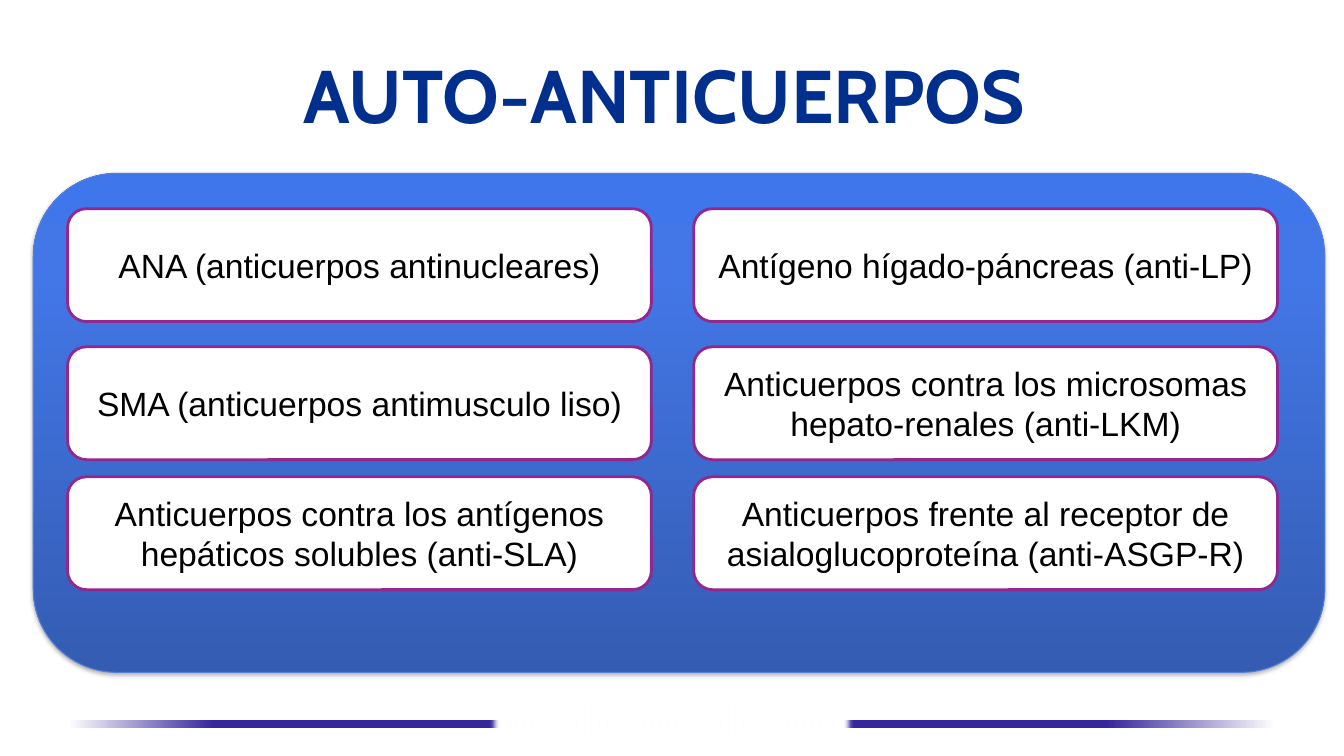
"""Build the slide on auto-antibodies: a title, a blue panel and six cards."""
from dataclasses import dataclass
from typing import Optional

from pptx import Presentation
from pptx import oxml
from pptx import util as u
from pptx.dml import color
from pptx.enum import shapes, text
from pptx.oxml import ns

Stops = tuple[tuple[int, str], ...]


@dataclass(frozen=True)
class Theme:
    """Colours, fonts and type sizes of the slide."""
    white: str = "FFFFFF"
    title: str = "002F8E"
    title_edge: str = "FDFCFD"
    body: str = "000000"
    card_edge: str = "92278F"
    panel_edge: str = "547ED9"
    panel: Stops = ((0, "345CB2"), (80, "4377E7"), (100, "4076EB"))
    band: Stops = ((0, "FFFFFF"), (12, "36259D"), (50, "36259D"),
                   (86, "36259D"), (100, "FFFFFF"))
    title_font: str = "Cabin"
    body_font: str = "Arial"
    title_size: float = 53.3
    body_size: float = 24


@dataclass(frozen=True)
class Box:
    """A filled shape with an optional edge, gradient, effect and label."""
    left: float
    top: float
    width: float
    height: float
    kind: shapes.MSO_SHAPE = shapes.MSO_SHAPE.RECTANGLE
    stops: Stops = ()
    upward: bool = False
    edge: Optional[str] = None
    edge_width: float = 0
    effect: str = ""
    label: str = ""


THEME = Theme()
ROUNDED = shapes.MSO_SHAPE.ROUNDED_RECTANGLE
SHADOW = ('<a:outerShdw %s blurRad="40000" dist="23000" dir="5400000" rotWithShape="0">'
          '<a:srgbClr val="000000"><a:alpha val="35000"/></a:srgbClr></a:outerShdw>')
SOFT_EDGE = '<a:softEdge %s rad="63500"/>'
TITLE = "AUTO-ANTICUERPOS "
COLUMNS = (0.67, 6.88)
ROWS = (2.07, 3.44, 4.73)
LABELS = (
    ("ANA (anticuerpos antinucleares)", "Antígeno hígado-páncreas (anti-LP)"),
    ("SMA (anticuerpos antimusculo liso)",
     "Anticuerpos contra los microsomas hepato-renales (anti-LKM)"),
    ("Anticuerpos contra los antígenos hepáticos solubles (anti-SLA)",
     "Anticuerpos frente al receptor de asialoglucoproteína (anti-ASGP-R)"),
)
BACKDROP = (
    Box(0.68, 7.14, 11.97, 0.08, stops=THEME.band),
    Box(4.83, 6.98, 3.67, 0.39, effect=SOFT_EDGE),
    Box(0.33, 1.72, 12.81, 4.95, ROUNDED, THEME.panel, True,
        THEME.panel_edge, 0.75, SHADOW),
)
CARDS = tuple(
    Box(left, top, 5.79, 1.12, ROUNDED, edge=THEME.card_edge, edge_width=2, label=label)
    for top, labels in zip(ROWS, LABELS)
    for left, label in zip(COLUMNS, labels)
)


def rgb(value: str) -> color.RGBColor:
    """Turn a hex string into a colour."""
    return color.RGBColor.from_string(value)


def xml(markup: str):
    """Parse one drawing element."""
    return oxml.parse_xml(markup % ns.nsdecls("a"))


def write(sp, content: str, ink: str, **font):
    """Put one centred line of text in a shape and return its run."""
    tf = sp.text_frame
    tf.word_wrap = True
    tf.vertical_anchor = text.MSO_ANCHOR.MIDDLE
    p = tf.paragraphs[0]
    p.alignment = text.PP_ALIGN.CENTER
    r = p.add_run()
    r.text = content
    for name, value in font.items():
        setattr(r.font, name, value)
    r.font.color.rgb = rgb(ink)
    return r


def paint(sp, box: Box) -> None:
    """Fill a shape with white or with the gradient of its box."""
    if not box.stops:
        sp.fill.solid()
        sp.fill.fore_color.rgb = rgb(THEME.white)
        return
    sp.fill.gradient()
    sp.fill.gradient_angle = 90 if box.upward else 0
    gs_list = sp.element.spPr.find(".//" + ns.qn("a:gsLst"))
    for stop in list(gs_list):
        gs_list.remove(stop)
    for position, value in box.stops:
        gs_list.append(xml(f'<a:gs %s pos="{position * 1000}">'
                           f'<a:srgbClr val="{value}"/></a:gs>'))


def draw_box(s, box: Box) -> None:
    """Draw one box on the slide."""
    bounds = map(u.Inches, (box.left, box.top, box.width, box.height))
    sp = s.shapes.add_shape(box.kind, *bounds)
    sp.shadow.inherit = False
    paint(sp, box)
    if box.edge:
        sp.line.color.rgb = rgb(box.edge)
        sp.line.width = u.Pt(box.edge_width)
    else:
        sp.line.fill.background()
    if box.effect:
        sp.element.spPr.find(ns.qn("a:effectLst")).append(xml(box.effect))
    if box.label:
        write(sp, box.label, THEME.body, name=THEME.body_font, size=u.Pt(THEME.body_size))


def draw_title(s) -> None:
    """Draw the outlined title."""
    sp = s.shapes.add_textbox(*map(u.Inches, (0.67, 0.3, 12, 1.25)))
    r = write(sp, TITLE, THEME.title, name=THEME.title_font,
              size=u.Pt(THEME.title_size), bold=True)
    r.font._element.insert(0, xml(
        f'<a:ln %s w="{u.Pt(1.4)}"><a:solidFill>'
        f'<a:srgbClr val="{THEME.title_edge}"/></a:solidFill></a:ln>'))


def main() -> None:
    """Build and save the presentation."""
    prs = Presentation()
    prs.slide_width, prs.slide_height = u.Inches(13.33), u.Inches(7.5)
    s = prs.slides.add_slide(prs.slide_layouts[6])
    for box in BACKDROP + CARDS:
        draw_box(s, box)
    draw_title(s)
    prs.save("out.pptx")


if __name__ == "__main__":
    main()
